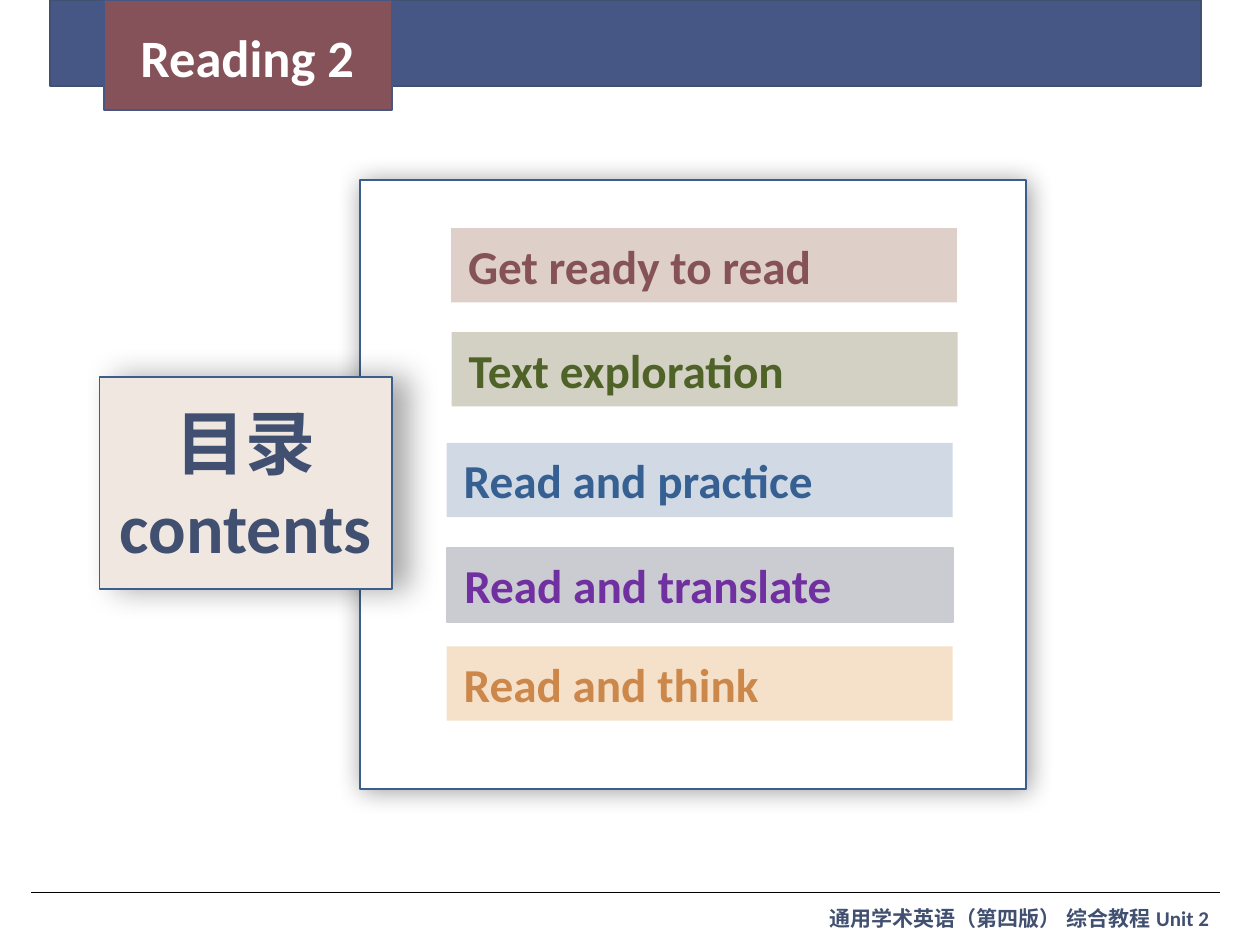
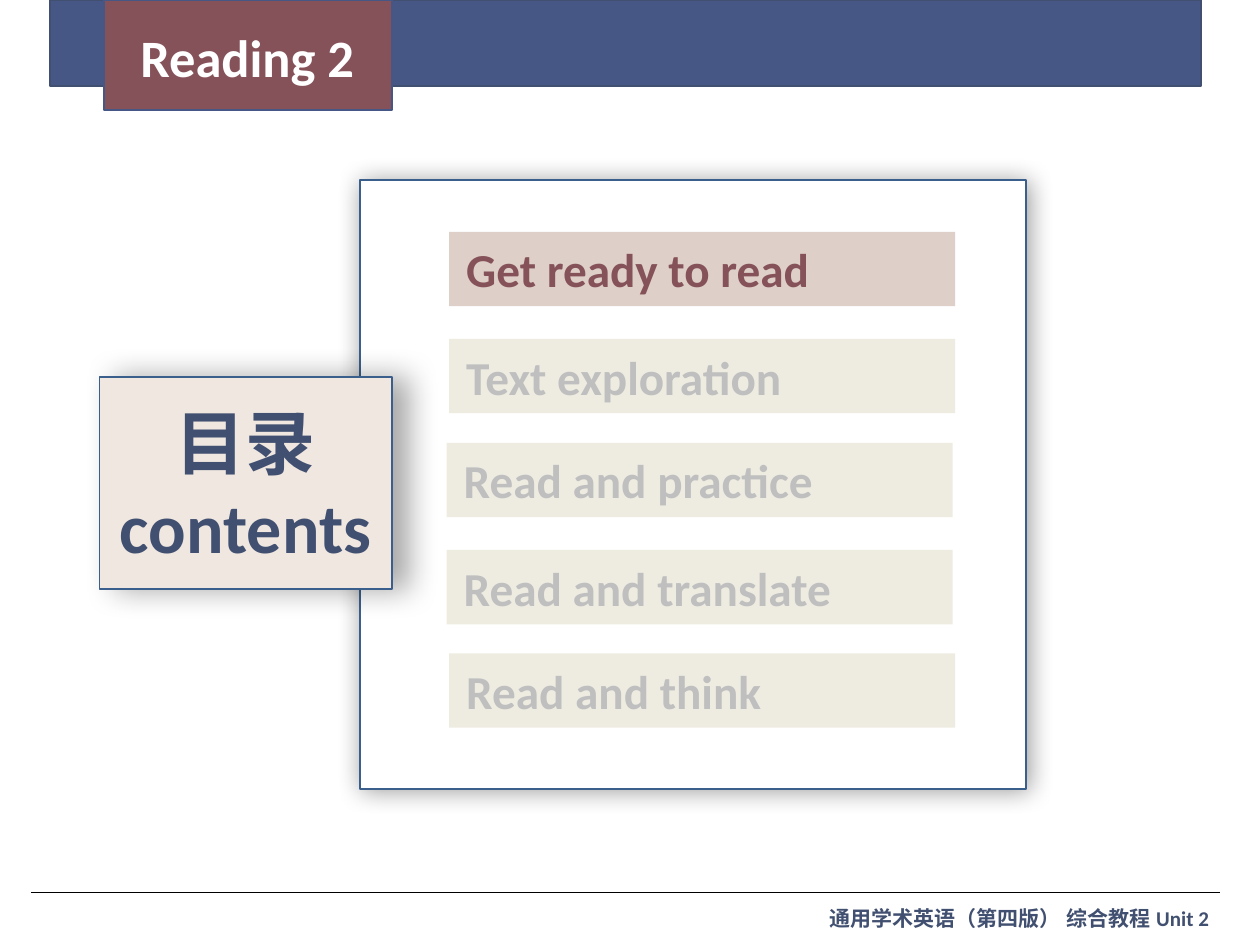
from dataclasses import dataclass
from typing import Optional

from lxml.etree import SubElement
from pptx import Presentation
from pptx.dml.color import RGBColor
from pptx.enum.shapes import MSO_CONNECTOR, MSO_SHAPE
from pptx.enum.text import MSO_ANCHOR, PP_ALIGN
from pptx.oxml.ns import qn
from pptx.util import Inches, Pt

COLUMNS, ROWS = 20, 15
WIDTH, HEIGHT = Inches(20), Inches(15)

NAVY, BLUE, MAROON = "415070", "465685", "855259"
OUTLINE, CREAM, WHITE, BLACK = "3A5F8C", "F0E7E1", "FFFFFF", "000000"
MUTED_FILL, MUTED_TEXT = "EEECE1", "BFBFBF"
LATIN, CHINESE, FOOTER_FONT = "Calibri", "Noto Sans CJK SC", "Arial"
BAR_WIDTH, BAR_HEIGHT, BAR_INDENT = 8.03, 1.18, 0.27


@dataclass(frozen=True)
class Box:
    col: float
    row: float
    cols: float
    rows: float

    def emu(self) -> tuple:
        return x(self.col), y(self.row), x(self.cols), y(self.rows)


@dataclass(frozen=True)
class Shadow:
    alpha: int
    blur: float
    distance: float
    angle: int


@dataclass(frozen=True)
class Section:
    label: str
    fill: str
    color: str
    line: Optional[str] = None


@dataclass(frozen=True)
class Agenda:
    places: tuple
    active: tuple


SECTIONS = (
    Section("Get ready to read", "DECFC9", MAROON),
    Section("Text exploration", "D2D1C3", "4F6228"),
    Section("Read and practice", "D0D9E4", "376092"),
    Section("Read and translate", "CBCBD2", "7030A0", "CBCBD2"),
    Section("Read and think", "F5E1CA", "CC884A"),
)
AGENDAS = (
    Agenda(((7.16, 3.62), (7.17, 5.27), (7.09, 7.03), (7.1, 8.69), (7.09, 10.26)),
           (0, 1, 2, 3, 4)),
    Agenda(((7.13, 3.68), (7.13, 5.38), (7.09, 7.03), (7.09, 8.73), (7.13, 10.37)),
           (0,)),
)


def x(cols: float) -> int:
    return round(WIDTH * cols / COLUMNS)


def y(rows: float) -> int:
    return round(HEIGHT * rows / ROWS)


def rgb(color: str) -> RGBColor:
    return RGBColor.from_string(color)


def style(r, size: float, color: str, font: str = LATIN) -> None:
    r.font.size = Pt(size)
    r.font.bold = True
    r.font.name = font
    r.font.color.rgb = rgb(color)
    r.font._element.find(qn("a:latin")).addnext(
        r.font._element.makeelement(qn("a:ea"), {"typeface": font}))


def add_shadow(sp, shadow: Shadow) -> None:
    effects = sp._element.spPr.find(qn("a:effectLst"))
    outer = SubElement(effects, qn("a:outerShdw"), {
        "blurRad": str(Pt(shadow.blur)), "dist": str(Pt(shadow.distance)),
        "dir": str(shadow.angle * 60000), "algn": "ctr", "rotWithShape": "0"})
    color = SubElement(outer, qn("a:srgbClr"), val=BLACK)
    SubElement(color, qn("a:alpha"), val=str(shadow.alpha * 1000))


def add_rect(s, box: Box, fill: str, line: Optional[str] = None,
             shadow: Optional[Shadow] = None):
    sp = s.shapes.add_shape(MSO_SHAPE.RECTANGLE, *box.emu())
    sp.shadow.inherit = False
    sp.fill.solid()
    sp.fill.fore_color.rgb = rgb(fill)
    if line:
        sp.line.color.rgb = rgb(line)
        sp.line.width = Pt(2)
    else:
        sp.line.fill.background()
    if shadow:
        add_shadow(sp, shadow)
    return sp


def add_text(s, box: Box, text: str, size: float, color: str, font: str = LATIN):
    tf = s.shapes.add_textbox(*box.emu()).text_frame
    tf.word_wrap = True
    p = tf.paragraphs[0]
    p.text = text
    style(p.runs[0], size, color, font)
    return p


def add_footer(s) -> None:
    p = add_text(s, Box(13.07, 14.32, 6.93, 0.5), "通用学术英语（第四版） 综合教程 ",
                 24, NAVY, FOOTER_FONT)
    r = p.add_run()
    r.text = "Unit 2"
    style(r, 24, NAVY)
    rule = s.shapes.add_connector(MSO_CONNECTOR.STRAIGHT, x(0.49), y(14.17),
                                  x(19.36), y(14.17))
    rule.line.color.rgb = rgb(BLACK)
    rule.line.width = Pt(0.75)
    SubElement(rule._element.spPr, qn("a:effectLst"))


def add_header(s, title: str) -> None:
    add_rect(s, Box(0.79, 0, 18.27, 1.36), BLUE, NAVY)
    add_rect(s, Box(1.65, 0, 4.57, 1.75), MAROON, BLUE)
    add_text(s, Box(2.13, 0.35, 4.57, 1.11), title, 60, WHITE)


def add_contents_card(s) -> None:
    add_rect(s, Box(5.72, 2.86, 10.57, 9.66), WHITE, OUTLINE, Shadow(40, 29, 3, 45))
    card = add_rect(s, Box(1.58, 5.99, 4.64, 3.36), CREAM, OUTLINE,
                    Shadow(34, 35, 18, 0))
    tf = card.text_frame
    tf.text = "目录\ncontents"
    tf.vertical_anchor = MSO_ANCHOR.MIDDLE
    for p, font in zip(tf.paragraphs, (CHINESE, LATIN)):
        p.alignment = PP_ALIGN.CENTER
        style(p.runs[0], 80, NAVY, font)


def add_bar(s, section: Section, place: tuple, active: bool) -> None:
    sp = add_rect(s, Box(*place, BAR_WIDTH, BAR_HEIGHT),
                  section.fill if active else MUTED_FILL,
                  section.line if active else None)
    tf = sp.text_frame
    tf.text = section.label
    tf.margin_left = x(BAR_INDENT)
    tf.vertical_anchor = MSO_ANCHOR.MIDDLE
    p = tf.paragraphs[0]
    p.alignment = PP_ALIGN.LEFT
    style(p.runs[0], 54, section.color if active else MUTED_TEXT)


def add_agenda_slide(prs, agenda: Agenda) -> None:
    s = prs.slides.add_slide(prs.slide_layouts[6])
    add_footer(s)
    add_header(s, "Reading 2")
    add_contents_card(s)
    for i, (section, place) in enumerate(zip(SECTIONS, agenda.places)):
        add_bar(s, section, place, i in agenda.active)


def main() -> None:
    prs = Presentation()
    prs.slide_width, prs.slide_height = WIDTH, HEIGHT
    for agenda in AGENDAS:
        add_agenda_slide(prs, agenda)
    prs.save("out.pptx")


if __name__ == "__main__":
    main()
